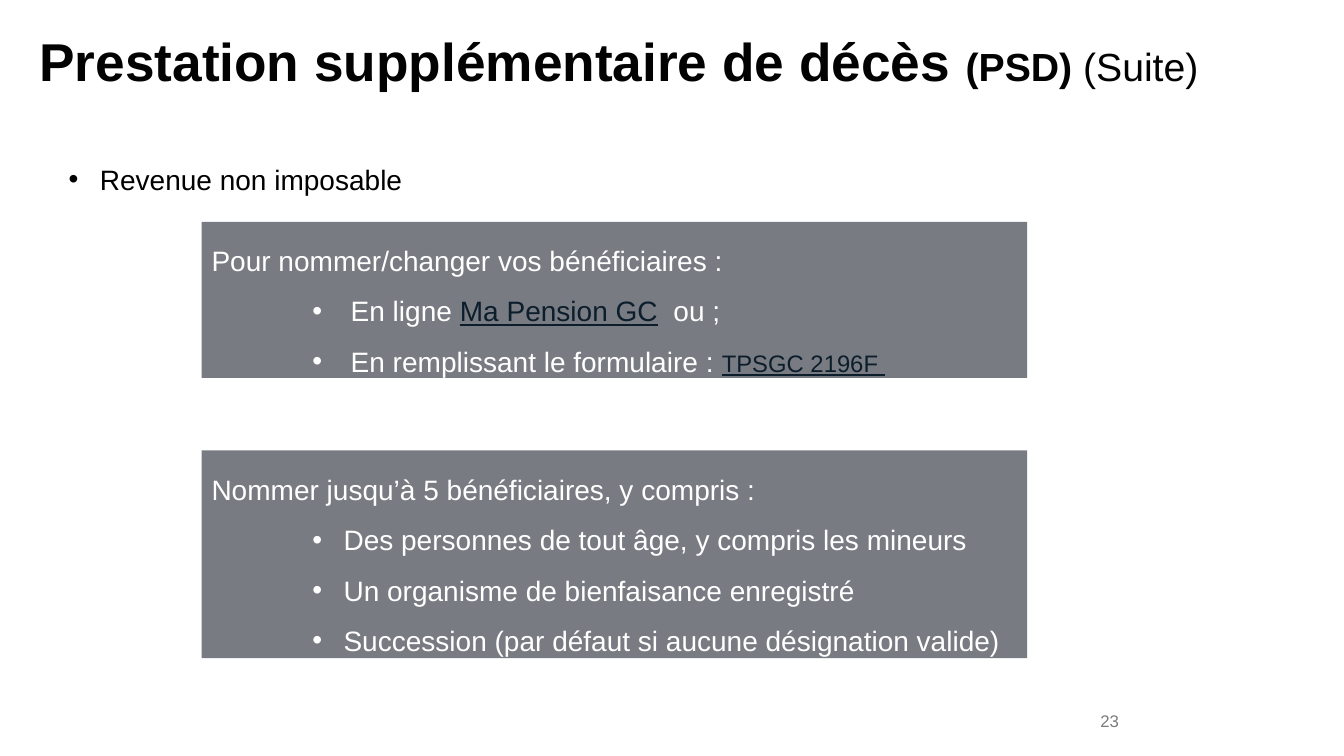
import pptx
import pptx.dml.color
import pptx.enum.shapes
import pptx.enum.text
import pptx.util
from pptx.oxml.ns import qn
from lxml import etree

Pt = pptx.util.Pt
FONT = "Arial"
COLORS = {"title": "020202", "body": "000000", "panel": "4B4F59",
          "panel_text": "FFFFFF", "link": "0C1E2B", "number": "797B7D"}

# Each span is (text, format overrides)
LINK = {"color": "link", "underline": True}
TITLE = [("Prestation supplémentaire de décès ", {}),
         ("(PSD) ", {"size": 28}),
         ("(Suite)", {"size": 28, "bold": False})]
INTRO = [("Revenue non imposable", {})]
PAGE_NUMBER = [("23", {})]
PANELS = [
    {"top": 158.4, "height": 111.6, "margin": 99.4, "hang": 27.4,
     "heading": [("Pour nommer/changer vos bénéficiaires :", {})],
     "items": [
         [("En ligne ", {}), ("Ma Pension GC", LINK), ("  ou ;", {})],
         [("En remplissant le formulaire : ", {}),
          ("TPSGC 2196F ", {**LINK, "size": 17})],
     ]},
    {"top": 321.8, "height": 148.3, "margin": 94.3, "hang": 22.3,
     "heading": [("Nommer jusqu’à 5 bénéficiaires, y compris :", {})],
     "items": [
         [("Des personnes de tout âge, y compris les mineurs", {})],
         [("Un organisme de bienfaisance enregistré", {})],
         [("Succession (par défaut si aucune désignation valide)", {})],
     ]},
]
PANEL_LEFT, PANEL_WIDTH = 144, 589.7


def rgb(name):
    return pptx.dml.color.RGBColor.from_string(COLORS[name])


def place(box, left, top, width, height):
    box.left, box.top, box.width, box.height = map(Pt, (left, top, width, height))


def prepare_frame(box, anchor=pptx.enum.text.MSO_ANCHOR.TOP):
    frame = box.text_frame
    frame.word_wrap = True
    frame.auto_size = pptx.enum.text.MSO_AUTO_SIZE.NONE
    frame.vertical_anchor = anchor
    return frame


def add_bullet(para, margin, hang):
    properties = para._p.get_or_add_pPr()
    properties.set("marL", str(Pt(margin)))
    properties.set("indent", str(-Pt(hang)))
    etree.SubElement(properties, qn("a:buFont"), typeface=FONT)
    etree.SubElement(properties, qn("a:buChar"), char="•")


def write(para, spans, size, color, spacing=1.0, bold=False,
          align=pptx.enum.text.PP_ALIGN.LEFT):
    para.alignment = align
    para.line_spacing = spacing
    para.space_before = Pt(0)
    para.font.name = FONT
    para.font.size = Pt(size)
    para.font.bold = bold
    para.font.color.rgb = rgb(color)
    for text, changes in spans:
        span = para.add_run()
        span.text = text
        if "size" in changes:
            span.font.size = Pt(changes["size"])
        if "bold" in changes:
            span.font.bold = changes["bold"]
        if "underline" in changes:
            span.font.underline = changes["underline"]
        if "color" in changes:
            span.font.color.rgb = rgb(changes["color"])


def add_panel(page, panel):
    box = page.shapes.add_shape(
        pptx.enum.shapes.MSO_SHAPE.RECTANGLE, Pt(PANEL_LEFT), Pt(panel["top"]),
        Pt(PANEL_WIDTH), Pt(panel["height"]))
    box.shadow.inherit = False
    box.line.fill.background()
    box.fill.solid()
    box.fill.fore_color.rgb = rgb("panel")
    fill_color = box._element.spPr.find(qn("a:solidFill"))[0]
    etree.SubElement(fill_color, qn("a:alpha"), val="75000")
    frame = prepare_frame(box)
    write(frame.paragraphs[0], panel["heading"], 20, "panel_text", 1.5)
    for item in panel["items"]:
        para = frame.add_paragraph()
        para.level = 1
        add_bullet(para, panel["margin"], panel["hang"])
        write(para, item, 20, "panel_text", 1.5)


def main():
    deck = pptx.Presentation()
    deck.slide_width, deck.slide_height = Pt(960), Pt(540)
    page = deck.slides.add_slide(deck.slide_layouts[1])

    title = page.shapes.title
    place(title, 28.1, 25.2, 871.2, 80.6)
    frame = prepare_frame(title)
    frame.margin_left = frame.margin_right = Pt(0)
    frame.margin_top = frame.margin_bottom = Pt(0)
    write(frame.paragraphs[0], TITLE, 38, "title", 0.9, bold=True)

    intro = page.placeholders[1]
    place(intro, 41.8, 112.3, 274.3, 31.7)
    para = prepare_frame(intro).paragraphs[0]
    add_bullet(para, 22.3, 22.3)
    write(para, INTRO, 20, "body")

    for panel in PANELS:
        add_panel(page, panel)

    number = page.shapes.add_textbox(Pt(693.4), Pt(500.4), Pt(113), Pt(28.8))
    frame = prepare_frame(number, pptx.enum.text.MSO_ANCHOR.MIDDLE)
    write(frame.paragraphs[0], PAGE_NUMBER, 12, "number",
          align=pptx.enum.text.PP_ALIGN.RIGHT)

    deck.save("out.pptx")


if __name__ == "__main__":
    main()
